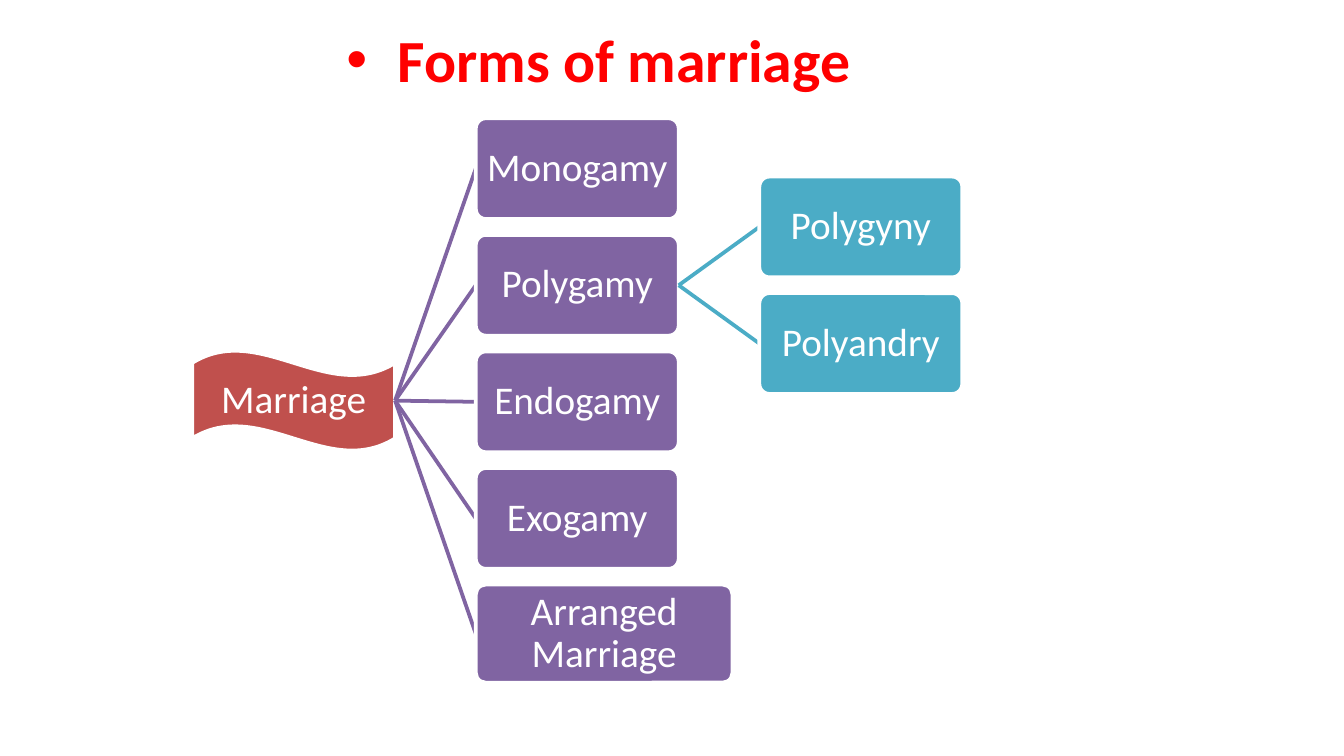
from lxml import etree
from pptx import Presentation
from pptx import util as u
from pptx.dml.color import RGBColor
from pptx.enum import shapes, text
from pptx.oxml.ns import qn

COLORS = {
    "title": "FF0000",
    "root": "C0504D",
    "form": "8064A2",
    "subform": "4BACC6",
    "white": "FFFFFF",
}
FORMS = [
    ("Monogamy", []),
    ("Polygamy", [("Polygyny", 0.5), ("Polyandry", 1.5)]),
    ("Endogamy", []),
    ("Exogamy", []),
    ("Arranged Marriage", []),
]


class TreeSlide:
    font_name = "Calibri"
    left, top = 1.43, 0.88
    column_step, row_step = 2.11, 3.47 / 4
    node_width, node_height = 1.51, 0.75

    def __init__(self, presentation):
        self.slide = presentation.slides.add_slide(presentation.slide_layouts[6])

    def color(self, name):
        return RGBColor.from_string(COLORS[name])

    def style(self, paragraph, size, color, bold=False):
        paragraph.alignment = text.PP_ALIGN.CENTER
        paragraph.font.name = self.font_name
        paragraph.font.size = u.Pt(size)
        paragraph.font.bold = bold
        paragraph.font.color.rgb = self.color(color)

    def title(self, words):
        box = self.slide.shapes.add_textbox(
            u.Inches(0.33), u.Inches(0.12), u.Inches(8.25), u.Inches(5.19))
        box.text_frame.word_wrap = True
        paragraph = box.text_frame.paragraphs[0]
        paragraph.text = words
        properties = paragraph._p.get_or_add_pPr()
        properties.set("marL", str(u.Inches(0.38)))
        properties.set("indent", str(u.Inches(-0.38)))
        etree.SubElement(properties, qn("a:buFont")).set("typeface", "Arial")
        etree.SubElement(properties, qn("a:buChar")).set("char", "•")
        self.style(paragraph, 32, "title", bold=True)

    def node(self, words, column, row, color, width=node_width, height=node_height,
             kind=shapes.MSO_SHAPE.ROUNDED_RECTANGLE):
        shape = self.slide.shapes.add_shape(
            kind,
            u.Inches(self.left + column * self.column_step),
            u.Inches(self.top + row * self.row_step),
            u.Inches(width), u.Inches(height))
        if kind == shapes.MSO_SHAPE.ROUNDED_RECTANGLE:
            shape.adjustments[0] = 0.1
        shape.shadow.inherit = False
        shape.fill.solid()
        shape.fill.fore_color.rgb = self.color(color)
        shape.line.color.rgb = self.color("white")
        shape.line.width = u.Pt(2)
        frame = shape.text_frame
        frame.word_wrap = True
        frame.vertical_anchor = text.MSO_ANCHOR.MIDDLE
        frame.margin_left = frame.margin_right = u.Inches(0.03)
        frame.margin_top = frame.margin_bottom = u.Inches(0.01)
        paragraph = frame.paragraphs[0]
        paragraph.text = words
        paragraph.line_spacing = 0.9
        self.style(paragraph, 21, "white")
        return shape

    def branch(self, parent, words, column, row, color, **size):
        connector = self.slide.shapes.add_connector(
            shapes.MSO_CONNECTOR.STRAIGHT, 0, 0, 0, 0)
        connector.line.color.rgb = self.color(color)
        connector.line.width = u.Pt(2)
        etree.SubElement(connector._element.spPr, qn("a:effectLst"))
        child = self.node(words, column, row, color, **size)
        connector.begin_connect(parent, 3)
        connector.end_connect(child, 1)
        return child


def main():
    presentation = Presentation()
    presentation.slide_width = u.Inches(10)
    presentation.slide_height = presentation.slide_width * 9 // 16
    tree = TreeSlide(presentation)
    tree.title("Forms of marriage")
    root = tree.node("Marriage", 0, 1.99, "root", kind=shapes.MSO_SHAPE.WAVE)
    for row, (form, subforms) in enumerate(FORMS):
        size = {"width": 1.91, "height": 0.73} if form == "Arranged Marriage" else {}
        parent = tree.branch(root, form, 1, row, "form", **size)
        for subform, subrow in subforms:
            tree.branch(parent, subform, 2, subrow, "subform")
    presentation.save("out.pptx")


if __name__ == "__main__":
    main()
